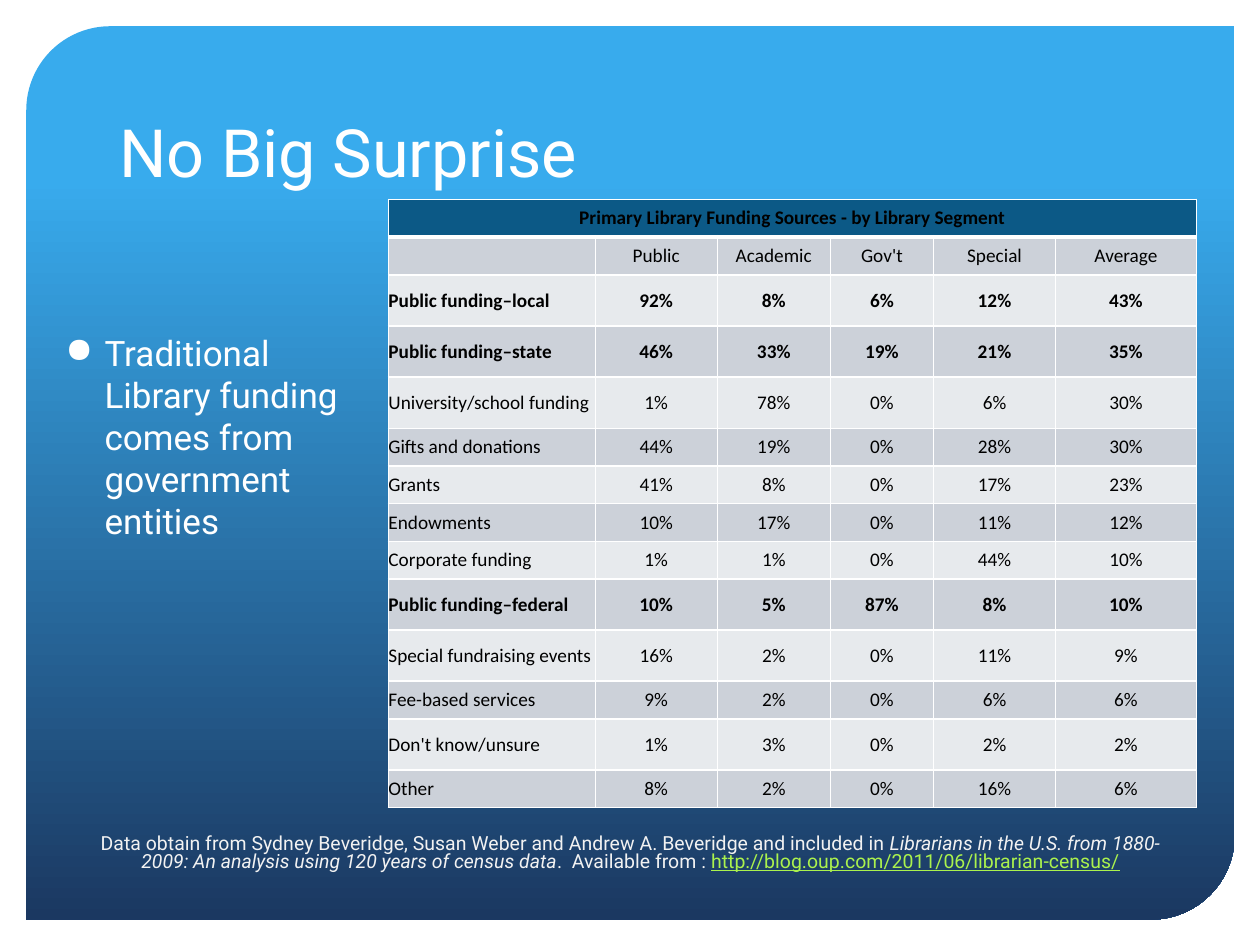
from lxml.etree import SubElement
from pptx import Presentation
from pptx.dml.color import RGBColor
from pptx.enum.shapes import MSO_SHAPE
from pptx.enum.text import MSO_ANCHOR, PP_ALIGN
from pptx.oxml.ns import qn
from pptx.util import Cm, Pt

COLORS = {
    "white": "FFFFFF", "sky": "38ABED", "navy": "1B3861", "black": "000000",
    "header": "0C5986", "dark": "CCD1D9", "light": "E7EAED",
    "source": "F2F2F2", "link": "ABF24D",
}
TITLE = "No Big Surprise"
BODY = "Traditional Library funding comes from government entities"
SOURCE = [
    ("Data obtain from Sydney Beveridge, Susan Weber and Andrew A. Beveridge "
     "and included in ", {}),
    ("Librarians in the U.S. from 1880-2009: An analysis using 120 years of "
     "census data", {"italic": True}),
    (".  Available from : ", {}),
    ("http://blog.oup.com/2011/06/librarian-census/",
     {"color": "link", "underline": True}),
]
TABLE_TITLE = "Primary Library Funding Sources - by Library Segment"
SEGMENTS = ["", "Public", "Academic", "Gov't", "Special", "Average"]
FUNDING = [
    ("Public funding–local", 92, 8, 6, 12, 43),
    ("Public funding–state", 46, 33, 19, 21, 35),
    ("University/school funding", 1, 78, 0, 6, 30),
    ("Gifts and donations", 44, 19, 0, 28, 30),
    ("Grants", 41, 8, 0, 17, 23),
    ("Endowments", 10, 17, 0, 11, 12),
    ("Corporate funding", 1, 1, 0, 44, 10),
    ("Public funding–federal", 10, 5, 87, 8, 10),
    ("Special fundraising events", 16, 2, 0, 11, 9),
    ("Fee-based services", 9, 2, 0, 6, 6),
    ("Don't know/unsure", 1, 3, 0, 2, 2),
    ("Other", 8, 2, 0, 16, 6),
]
COL_WIDTHS = [4.17, 2.46, 2.28, 2.08, 2.46, 2.84]
TALL_ROWS = {2, 3, 4, 9, 10, 12}
SHORT, TALL = 0.76, 1.03


def rgb(name):
    return RGBColor.from_string(COLORS[name])


def add_run(p, text, size, font="Roboto", color="white", bold=False,
            italic=False, underline=False):
    r = p.add_run()
    r.text = text
    f = r.font
    f.name, f.size = font, Pt(size)
    f.bold, f.italic, f.underline = bold, italic, underline
    f.color.rgb = rgb(color)


def add_text(s, box, runs, size, anchor=MSO_ANCHOR.TOP, align=PP_ALIGN.LEFT,
             spacing=None, bullet=None, color="white"):
    tf = s.shapes.add_textbox(*map(Cm, box)).text_frame
    tf.word_wrap = True
    tf.vertical_anchor = anchor
    p = tf.paragraphs[0]
    p.alignment = align
    if spacing:
        p.line_spacing = spacing
    if bullet:
        pPr = p._p.get_or_add_pPr()
        pPr.set("marL", str(Cm(0.79)))
        pPr.set("indent", str(-Cm(0.79)))
        SubElement(pPr, qn("a:buChar"), char=bullet)
    for text, style in runs:
        add_run(p, text, size, **{"color": color, **style})


def set_borders(cell, bottom):
    tcPr = cell._tc.get_or_add_tcPr()
    for side, width in (("L", 1), ("R", 1), ("T", 1), ("B", bottom)):
        ln = SubElement(tcPr, qn(f"a:ln{side}"), w=str(Pt(width)))
        fill = SubElement(ln, qn("a:solidFill"))
        SubElement(fill, qn("a:srgbClr"), val=COLORS["white"])


def fill_cell(cell, text, fill, bold=False, align=PP_ALIGN.CENTER, bottom=1):
    set_borders(cell, bottom)
    cell.fill.solid()
    cell.fill.fore_color.rgb = rgb(fill)
    cell.margin_left = cell.margin_right = 0
    cell.margin_top = cell.margin_bottom = 0
    cell.vertical_anchor = MSO_ANCHOR.MIDDLE
    p = cell.text_frame.paragraphs[0]
    p.alignment = align
    add_run(p, text, 11, font="Calibri", color="black", bold=bold)


def add_background(s):
    sp = s.shapes.add_shape(MSO_SHAPE.ROUND_2_DIAG_RECTANGLE,
                            Cm(0.53), Cm(0.53), Cm(24.36), Cm(18.01))
    sp.shadow.inherit = False
    sp.adjustments[0], sp.adjustments[1] = 0.094, 0
    sp.line.fill.background()
    sp.fill.gradient()
    sp.fill.gradient_angle = 270
    stops = ((0.17, "sky"), (1, "navy"))
    for stop, (position, color) in zip(sp.fill.gradient_stops, stops):
        stop.position = position
        stop.color.rgb = rgb(color)


def add_funding_table(s):
    rows = [(TABLE_TITLE,) + ("",) * 5, SEGMENTS]
    rows += [(label, *(f"{v}%" for v in values)) for label, *values in FUNDING]
    heights = [TALL if i in TALL_ROWS else SHORT for i in range(len(rows))]
    table = s.shapes.add_table(len(rows), len(COL_WIDTHS), Cm(7.83), Cm(4.02),
                               Cm(sum(COL_WIDTHS)), Cm(sum(heights))).table
    table.first_row = table.horz_banding = False
    for column, width in zip(table.columns, COL_WIDTHS):
        column.width = Cm(width)
    for i, (row, height) in enumerate(zip(rows, heights)):
        table.rows[i].height = Cm(height)
        header = i == 0
        fill = "header" if header else "dark" if i % 2 else "light"
        bold = header or row[0].startswith("Public funding")
        for j, text in enumerate(row):
            align = PP_ALIGN.LEFT if i > 1 and j == 0 else PP_ALIGN.CENTER
            fill_cell(table.cell(i, j), text, fill, bold, align,
                      bottom=3 if header else 1)
    table.cell(0, 0).merge(table.cell(0, len(COL_WIDTHS) - 1))


def main():
    prs = Presentation()
    prs.slide_width, prs.slide_height = Cm(25.4), Cm(19.05)
    s = prs.slides.add_slide(prs.slide_layouts[6])
    add_background(s)
    add_text(s, (2.16, 1.07, 21.06, 2.9), [(TITLE, {})], 38,
             anchor=MSO_ANCHOR.BOTTOM)
    add_text(s, (1.07, 6.55, 6.55, 10.59), [(BODY, {})], 20, bullet="●")
    add_funding_table(s)
    add_text(s, (1.7, 16.71, 22.02, 1.47), SOURCE, 11.1,
             align=PP_ALIGN.CENTER, spacing=0.8, color="source")
    prs.save("out.pptx")


if __name__ == "__main__":
    main()
